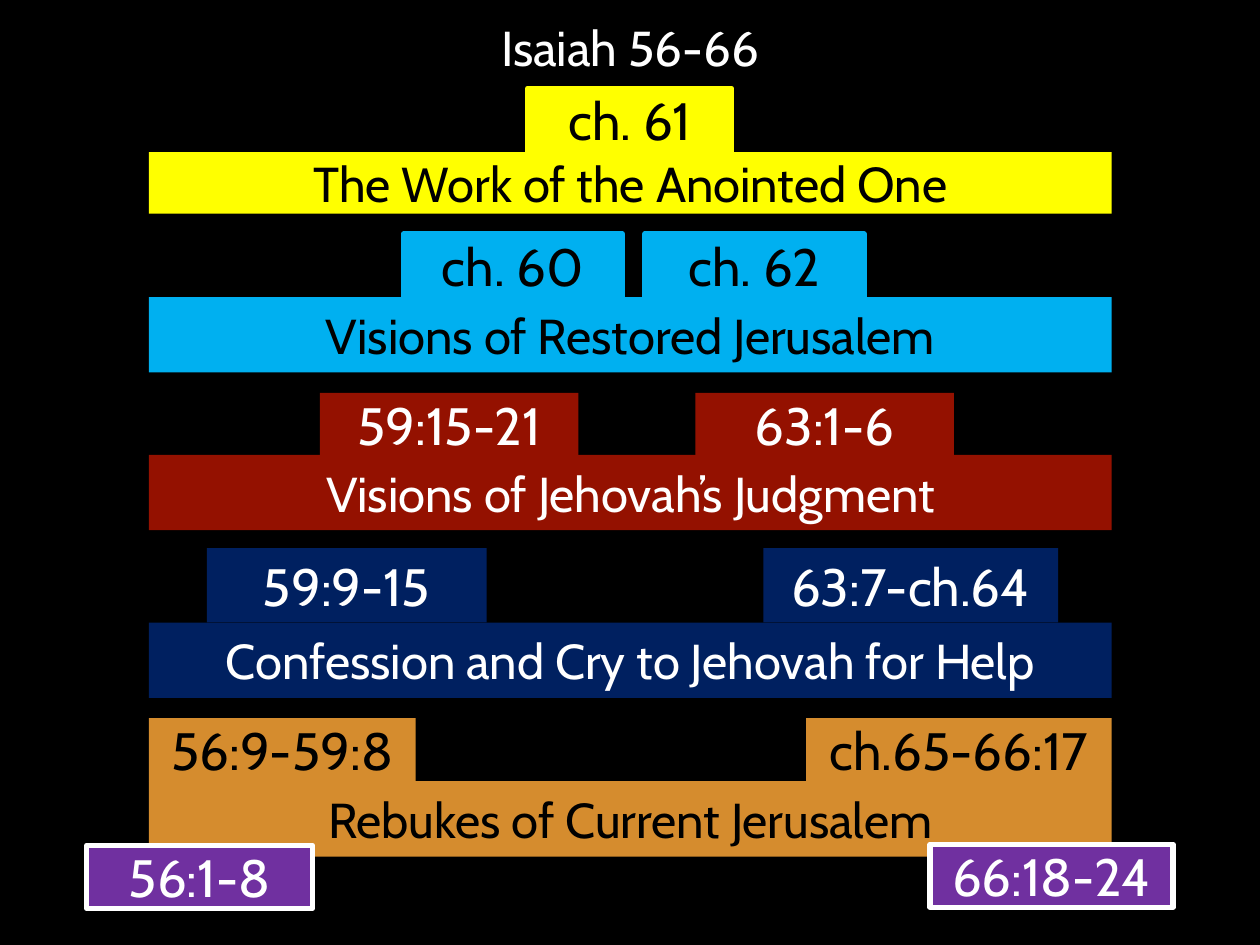
from dataclasses import dataclass
from typing import Optional

from pptx import Presentation
from pptx.dml.color import RGBColor
from pptx.enum.shapes import MSO_SHAPE
from pptx.enum.text import MSO_ANCHOR, PP_ALIGN
from pptx.util import Cm, Pt


@dataclass(frozen=True)
class Theme:
    font: str = "Cabin"
    label_size: int = 28
    verse_size: int = 30
    outline: float = 3
    black: str = "000000"
    white: str = "FFFFFF"
    yellow: str = "FFFF00"
    blue: str = "00B0F0"
    red: str = "941100"
    navy: str = "002060"
    orange: str = "D58C2E"
    purple: str = "7030A0"


@dataclass(frozen=True)
class Verse:
    text: str
    left: float
    width: float


@dataclass(frozen=True)
class Tier:
    label: str
    fill: str
    color: str
    tab_top: float
    bar_top: float
    verses: tuple[Verse, ...]
    tab_height: float = 1.27
    bar_height: float = 1.52
    outline: Optional[str] = None


T = Theme()
BAR_LEFT, BAR_WIDTH = 3.0, 19.41  # cm
CORNER_HEIGHT = 1.27

TIERS = (
    Tier("The Work of the Anointed One", T.yellow, T.black, 1.78, 3.07,
         (Verse("ch. 61", 10.64, 4.11),), bar_height=1.24, outline=T.yellow),
    Tier("Visions of Restored Jerusalem", T.blue, T.black, 4.72, 5.99,
         (Verse("ch. 60", 8.13, 4.42), Verse("ch. 62", 13.0, 4.42)), outline=T.blue),
    Tier("Visions of Jehovah’s Judgment", T.red, T.white, 7.92, 9.17,
         (Verse("59:15-21", 6.45, 5.21), Verse("63:1-6", 14.02, 5.21))),
    Tier("Confession and Cry to Jehovah for Help", T.navy, T.white, 11.05, 12.55,
         (Verse("59:9-15", 4.17, 5.64), Verse("63:7-ch.64", 15.39, 5.94)),
         tab_height=1.5),
    Tier("Rebukes of Current Jerusalem", T.orange, T.black, 14.48, 15.75,
         (Verse("56:9-59:8", BAR_LEFT, 5.38), Verse("ch.65-66:17", 16.25, 6.16))),
)
CORNERS = ((Verse("56:1-8", 1.75, 4.55), 17.04), (Verse("66:18-24", 18.75, 4.9), 17.02))


def write(sp, text: str, size: float, color: str) -> None:
    tf = sp.text_frame
    tf.text = text
    tf.word_wrap = True
    tf.vertical_anchor = MSO_ANCHOR.MIDDLE
    p = tf.paragraphs[0]
    p.alignment = PP_ALIGN.CENTER
    font = p.runs[0].font
    font.name, font.size = T.font, Pt(size)
    font.color.rgb = RGBColor.from_string(color)


def add_box(s, text: str, left: float, top: float, width: float, height: float,
            fill: str, color: str, size: float, outline: Optional[str] = None) -> None:
    sp = s.shapes.add_shape(MSO_SHAPE.RECTANGLE, Cm(left), Cm(top), Cm(width), Cm(height))
    sp.shadow.inherit = False
    sp.fill.solid()
    sp.fill.fore_color.rgb = RGBColor.from_string(fill)
    if outline:
        sp.line.color.rgb = RGBColor.from_string(outline)
        sp.line.width = Pt(T.outline)
    else:
        sp.line.fill.background()
    write(sp, text, size, color)


def add_tier(s, tier: Tier) -> None:
    for v in tier.verses:
        add_box(s, v.text, v.left, tier.tab_top, v.width, tier.tab_height,
                tier.fill, tier.color, T.verse_size, tier.outline)
    add_box(s, tier.label, BAR_LEFT, tier.bar_top, BAR_WIDTH, tier.bar_height,
            tier.fill, tier.color, T.label_size)


def main() -> None:
    prs = Presentation()
    prs.slide_width, prs.slide_height = Cm(25.4), Cm(19.05)
    s = prs.slides.add_slide(prs.slide_layouts[6])
    s.background.fill.solid()
    s.background.fill.fore_color.rgb = RGBColor.from_string(T.black)

    # Tiers, from the centre of the passage outwards
    for tier in TIERS:
        add_tier(s, tier)

    # Title
    title = s.shapes.add_textbox(Cm(1.75), Cm(0.33), Cm(21.9), Cm(1.37))
    write(title, "Isaiah 56-66", T.label_size, T.white)
    title.text_frame.paragraphs[0].line_spacing = 0.9

    # Opening and closing passages
    for v, top in CORNERS:
        add_box(s, v.text, v.left, top, v.width, CORNER_HEIGHT,
                T.purple, T.white, T.verse_size, T.white)

    prs.save("out.pptx")


if __name__ == "__main__":
    main()
